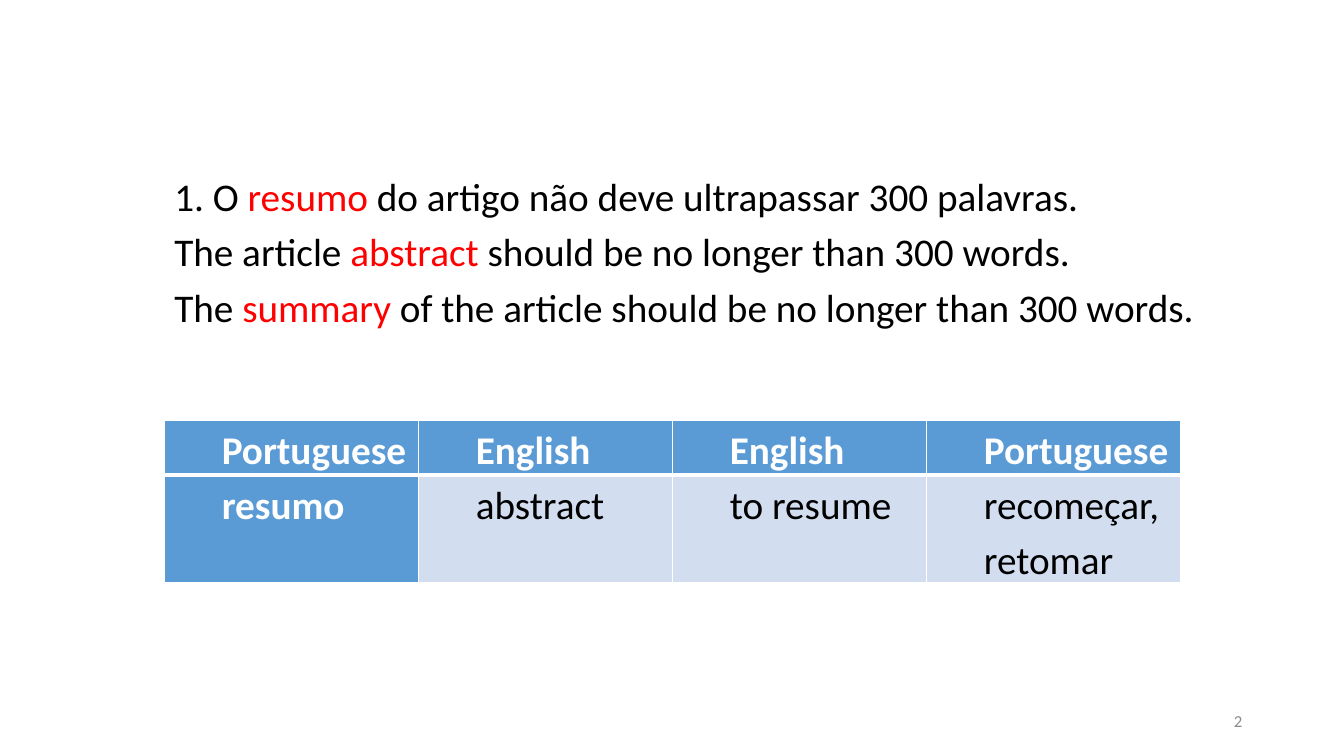
"""Build a slide comparing a Portuguese false friend with its English translations."""
from dataclasses import dataclass

from lxml.etree import SubElement
from pptx import Presentation
from pptx.dml.color import RGBColor
from pptx.enum.text import MSO_ANCHOR as Anchor, PP_ALIGN as Align
from pptx.oxml.ns import qn
from pptx.slide import Slide
from pptx.table import _Cell as Cell
from pptx.text.text import Font, TextFrame
from pptx.util import Inches, Pt


@dataclass(frozen=True)
class Theme:
    font: str = "Calibri"
    text_size: int = 28
    number_size: int = 12
    black: str = "000000"
    white: str = "FFFFFF"
    accent: str = "FF0000"
    grey: str = "8C8C8C"
    heading_fill: str = "5B9BD5"
    cell_fill: str = "D2DEEF"


@dataclass(frozen=True)
class Sentence:
    before: str
    keyword: str
    after: str
    spacing: int = 0


THEME = Theme()
SENTENCES = [
    Sentence("1. O ", "resumo ", "do artigo não deve ultrapassar 300 palavras."),
    Sentence("The article ", "abstract ", "should be no longer than 300 words.", 6),
    Sentence("The ", "summary ", "of the article should be no longer than 300 words."),
]
VOCABULARY = [
    ["Portuguese", "English", "English", "Portuguese"],
    ["resumo", "abstract", "to resume", "recomeçar, retomar"],
]
ROW_HEIGHTS = [0.54, 1.07]
COLUMN_WIDTH = 2.52
LEFT = 1.63


def format_font(font: Font, size: int, color: str, bold: bool = False) -> None:
    font.name = THEME.font
    font.size = Pt(size)
    font.bold = bold
    font.color.rgb = RGBColor.from_string(color)


def add_text_box(slide: Slide, left: float, top: float, width: float, height: float,
                 anchor: Anchor) -> TextFrame:
    shape = slide.shapes.add_textbox(Inches(left), Inches(top), Inches(width), Inches(height))
    frame = shape.text_frame
    frame.word_wrap = True
    frame.vertical_anchor = anchor
    return frame


def add_sentences(slide: Slide) -> None:
    frame = add_text_box(slide, LEFT, 1.66, 10.39, 1.99, Anchor.TOP)
    for index, sentence in enumerate(SENTENCES):
        paragraph = frame.add_paragraph() if index else frame.paragraphs[0]
        format_font(paragraph.font, THEME.text_size, THEME.black)
        paragraph.space_before = paragraph.space_after = Pt(sentence.spacing)
        for text in (sentence.before, sentence.keyword, sentence.after):
            run = paragraph.add_run()
            run.text = text
            if text == sentence.keyword:
                run.font.color.rgb = RGBColor.from_string(THEME.accent)


def add_borders(cell: Cell, top: int, bottom: int) -> None:
    properties = cell._tc.get_or_add_tcPr()
    for side, width in (("L", 1), ("R", 1), ("T", top), ("B", bottom)):
        line = SubElement(properties, qn(f"a:ln{side}"), w=str(Pt(width)))
        fill = SubElement(line, qn("a:solidFill"))
        SubElement(fill, qn("a:srgbClr"), val=THEME.white)


def format_cell(cell: Cell, text: str, is_header: bool, is_heading: bool) -> None:
    add_borders(cell, top=1 if is_header else 3, bottom=3 if is_header else 1)
    cell.fill.solid()
    fill_color = THEME.heading_fill if is_heading else THEME.cell_fill
    cell.fill.fore_color.rgb = RGBColor.from_string(fill_color)
    cell.margin_left = cell.margin_right = Inches(0.07)
    cell.margin_top = cell.margin_bottom = 0
    cell.text = text
    paragraph = cell.text_frame.paragraphs[0]
    paragraph.alignment = Align.JUSTIFY
    paragraph.line_spacing = 1.15
    paragraph._p.get_or_add_pPr().set("marL", str(Inches(0.5)))
    text_color = THEME.white if is_heading else THEME.black
    format_font(paragraph.font, THEME.text_size, text_color, is_heading)


def add_vocabulary(slide: Slide) -> None:
    row_count, column_count = len(VOCABULARY), len(VOCABULARY[0])
    table = slide.shapes.add_table(
        row_count, column_count, Inches(LEFT), Inches(4.17),
        Inches(COLUMN_WIDTH * column_count), Inches(sum(ROW_HEIGHTS))).table
    table.first_col = True
    for column in table.columns:
        column.width = Inches(COLUMN_WIDTH)
    for row_index, (words, height) in enumerate(zip(VOCABULARY, ROW_HEIGHTS)):
        table.rows[row_index].height = Inches(height)
        for column_index, word in enumerate(words):
            is_header = row_index == 0
            format_cell(table.cell(row_index, column_index), word, is_header,
                        is_header or column_index == 0)


def add_slide_number(slide: Slide) -> None:
    paragraph = add_text_box(slide, 9.42, 6.95, 3, 0.4, Anchor.MIDDLE).paragraphs[0]
    paragraph.text = "2"
    paragraph.alignment = Align.RIGHT
    format_font(paragraph.font, THEME.number_size, THEME.grey)


def main() -> None:
    presentation = Presentation()
    presentation.slide_width = Inches(13.33)
    presentation.slide_height = Inches(7.5)
    slide = presentation.slides.add_slide(presentation.slide_layouts[6])
    add_sentences(slide)
    add_vocabulary(slide)
    add_slide_number(slide)
    presentation.save("out.pptx")


if __name__ == "__main__":
    main()
